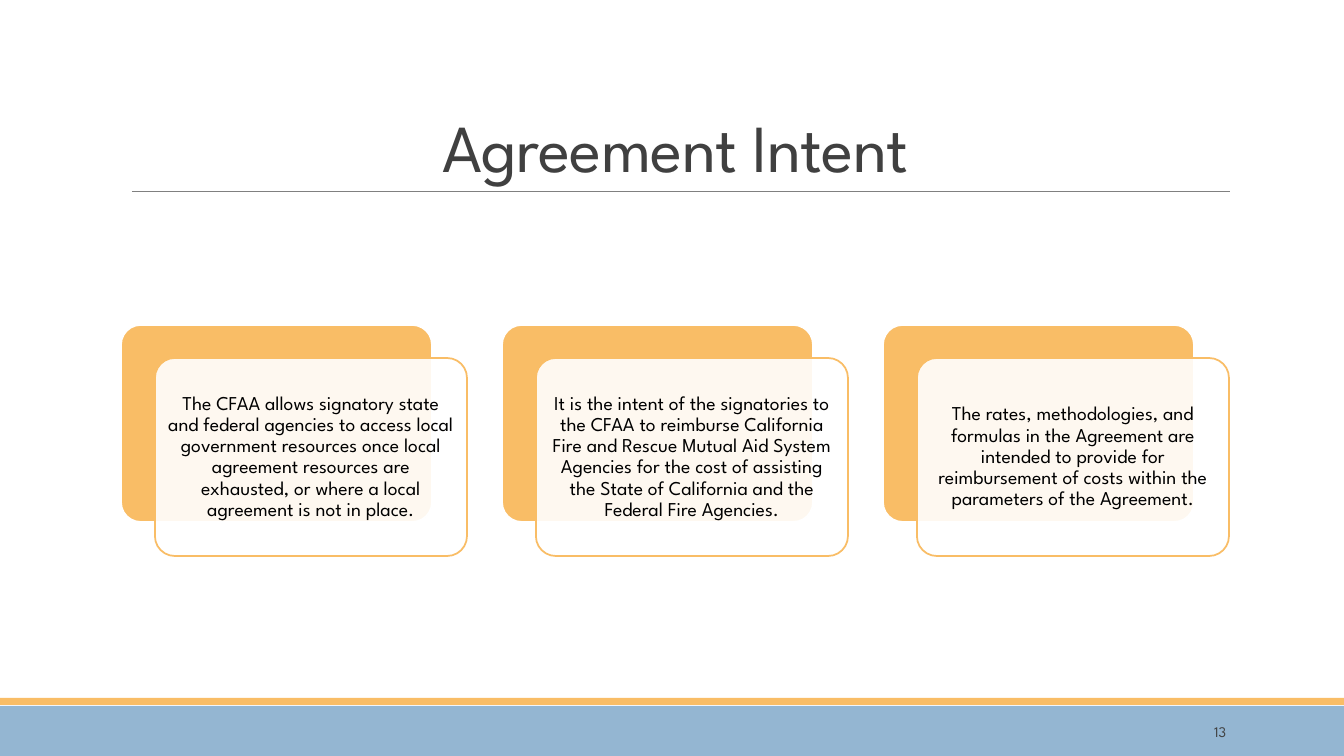
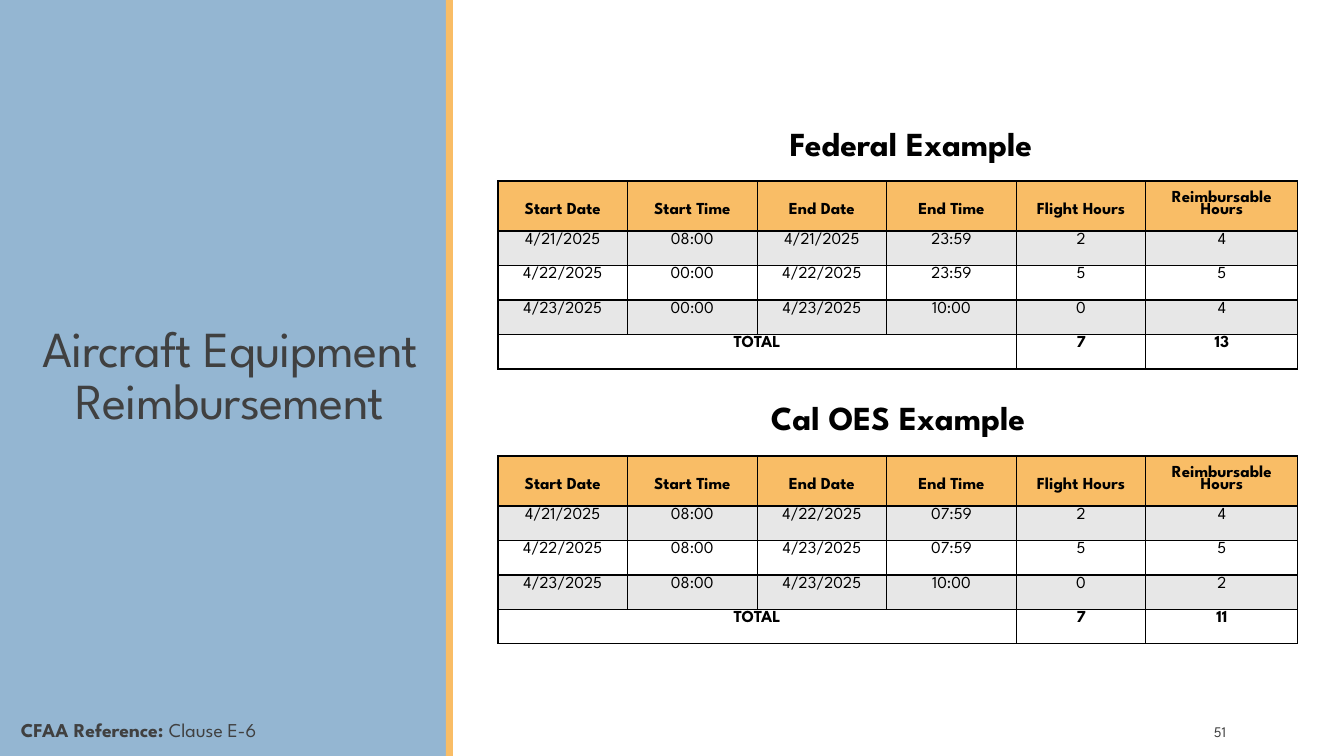
from dataclasses import dataclass

from lxml.etree import SubElement
from pptx import Presentation
from pptx.dml.color import RGBColor
from pptx.enum.shapes import MSO_CONNECTOR, MSO_SHAPE
from pptx.enum.text import MSO_ANCHOR, MSO_AUTO_SIZE, PP_ALIGN
from pptx.oxml.ns import qn
from pptx.shapes.autoshape import Shape
from pptx.slide import Slide
from pptx.table import _Cell
from pptx.text.text import TextFrame, _Paragraph
from pptx.util import Pt

FONT = "League Spartan"
BLUE = "94B6D2"
GOLD = "F9BD66"
DARK = "404040"
BLACK = "000000"
WHITE = "FFFFFF"
STRIPE = "E7E7E7"
RULE = "808080"

SLIDE_WIDTH = 1344
SLIDE_HEIGHT = 756
EMU_PER_PX = 914400 / 100.8


@dataclass(frozen=True)
class Box:
    left: int
    top: int
    width: int
    height: int

    def emu(self) -> tuple[int, int, int, int]:
        return px(self.left), px(self.top), px(self.width), px(self.height)


@dataclass(frozen=True)
class TextStyle:
    size: float
    color: str = BLACK
    bold: bool = False
    align: PP_ALIGN = PP_ALIGN.CENTER
    line_spacing: float = 1.0


@dataclass(frozen=True)
class Example:
    heading: str
    heading_box: Box
    table_top: int
    rows: tuple[tuple[str, ...], ...]
    totals: tuple[str, str]


CARD_STYLE = TextStyle(14, line_spacing=0.9)
HEADING_STYLE = TextStyle(24, bold=True)
NUMBER_STYLE = TextStyle(10.5, DARK, align=PP_ALIGN.RIGHT)
REFERENCE_STYLE = TextStyle(14, DARK, align=PP_ALIGN.LEFT)
HEADER_STYLE = TextStyle(12, bold=True, line_spacing=0.77)
CELL_STYLE = TextStyle(12, line_spacing=0.77)

CARD_TEXTS = (
    "The CFAA allows signatory state and federal agencies to access local "
    "government resources once local agreement resources are exhausted, or "
    "where a local agreement is not in place.",
    "It is the intent of the signatories to the CFAA to reimburse California "
    "Fire and Rescue Mutual Aid System Agencies for the cost of assisting the "
    "State of California and the Federal Fire Agencies.",
    "The rates, methodologies, and formulas in the Agreement are intended to "
    "provide for reimbursement of costs within the parameters of the Agreement.",
)
CARD_PITCH = 381

COLUMN_HEADS = ("Start Date", "Start Time", "End Date", "End Time",
                "Flight Hours", "Reimbursable Hours")
TABLE_LEFT = 498
TABLE_WIDTH = 800
TABLE_HEIGHT = 188
LAST_COLUMN_WIDTH = 152
HEADER_HEIGHT = 50

EXAMPLES = (
    Example("Federal Example", Box(491, 118, 840, 50), 181, (
        ("4/21/2025", "08:00", "4/21/2025", "23:59", "2", "4"),
        ("4/22/2025", "00:00", "4/22/2025", "23:59", "5", "5"),
        ("4/23/2025", "00:00", "4/23/2025", "10:00", "0", "4"),
    ), ("7", "13")),
    Example("Cal OES Example", Box(478, 392, 840, 50), 456, (
        ("4/21/2025", "08:00", "4/22/2025", "07:59", "2", "4"),
        ("4/22/2025", "08:00", "4/23/2025", "07:59", "5", "5"),
        ("4/23/2025", "08:00", "4/23/2025", "10:00", "0", "2"),
    ), ("7", "11")),
)


def px(length: float) -> int:
    return round(length * EMU_PER_PX)


def rgb(color: str) -> RGBColor:
    return RGBColor.from_string(color)


def style_paragraph(paragraph: _Paragraph, style: TextStyle) -> None:
    paragraph.alignment = style.align
    paragraph.line_spacing = style.line_spacing
    paragraph.font.name = FONT
    paragraph.font.size = Pt(style.size)
    paragraph.font.bold = style.bold
    paragraph.font.color.rgb = rgb(style.color)


def write(frame: TextFrame, text: str, style: TextStyle, anchor: MSO_ANCHOR) -> None:
    frame.word_wrap = True
    frame.vertical_anchor = anchor
    frame.text = text
    style_paragraph(frame.paragraphs[0], style)


def add_text(slide: Slide, box: Box, text: str, style: TextStyle,
             anchor: MSO_ANCHOR = MSO_ANCHOR.TOP) -> Shape:
    shape = slide.shapes.add_textbox(*box.emu())
    write(shape.text_frame, text, style, anchor)
    return shape


def add_panel(slide: Slide, box: Box, fill: str, line: str | None = None,
              preset: MSO_SHAPE = MSO_SHAPE.RECTANGLE) -> Shape:
    shape = slide.shapes.add_shape(preset, *box.emu())
    shape.shadow.inherit = False
    shape.fill.solid()
    shape.fill.fore_color.rgb = rgb(fill)
    if line:
        shape.line.color.rgb = rgb(line)
        shape.line.width = Pt(1.25)
    else:
        shape.line.fill.background()
    return shape


def set_title(slide: Slide, box: Box, text: str, size: float, anchor: MSO_ANCHOR) -> None:
    title = slide.shapes.title
    title.left, title.top, title.width, title.height = box.emu()
    write(title.text_frame, text, TextStyle(size, DARK, line_spacing=0.85), anchor)
    title.text_frame.auto_size = MSO_AUTO_SIZE.NONE
    title.text_frame.paragraphs[0].runs[0]._r.get_or_add_rPr().set("spc", "-50")
    slide.shapes._spTree.append(title._element)


def add_number(slide: Slide, number: int) -> None:
    add_text(slide, Box(1092, 712, 144, 40), str(number), NUMBER_STYLE, MSO_ANCHOR.MIDDLE)


def add_rule(slide: Slide, left: int, right: int, top: int) -> None:
    rule = slide.shapes.add_connector(
        MSO_CONNECTOR.STRAIGHT, px(left), px(top), px(right), px(top))
    rule.line.color.rgb = rgb(RULE)
    rule.line.width = Pt(0.5)
    SubElement(rule._element.spPr, qn("a:effectLst"))


def add_card(slide: Slide, left: int, text: str) -> None:
    back_box = Box(left, 325, 311, 197)
    front_box = Box(left + 34, 358, 312, 198)
    back = add_panel(slide, back_box, GOLD, WHITE, MSO_SHAPE.ROUNDED_RECTANGLE)
    front = add_panel(slide, front_box, WHITE, GOLD, MSO_SHAPE.ROUNDED_RECTANGLE)
    for shape in (back, front):
        shape.adjustments[0] = 0.1
    fill_color = front._element.spPr.find(qn("a:solidFill"))[0]
    SubElement(fill_color, qn("a:alpha")).set("val", "90000")
    frame = front.text_frame
    frame.margin_left = frame.margin_right = px(6)
    frame.margin_top = frame.margin_bottom = px(6)
    write(frame, text, CARD_STYLE, MSO_ANCHOR.MIDDLE)


def format_cell(cell: _Cell, fill: str, style: TextStyle) -> None:
    properties = cell._tc.get_or_add_tcPr()
    for side in ("a:lnL", "a:lnR", "a:lnT", "a:lnB"):
        border = SubElement(properties, qn(side), w=str(Pt(1)))
        SubElement(SubElement(border, qn("a:solidFill")), qn("a:srgbClr")).set("val", BLACK)
    cell.fill.solid()
    cell.fill.fore_color.rgb = rgb(fill)
    cell.margin_top = px(4)
    cell.margin_bottom = px(0)
    style_paragraph(cell.text_frame.paragraphs[0], style)


def add_example(slide: Slide, example: Example) -> None:
    add_text(slide, example.heading_box, example.heading, HEADING_STYLE)
    rows = (COLUMN_HEADS, *example.rows, ("TOTAL", "", "", "", *example.totals))
    last = len(rows) - 1
    box = Box(TABLE_LEFT, example.table_top, TABLE_WIDTH, TABLE_HEIGHT)
    table = slide.shapes.add_table(len(rows), len(COLUMN_HEADS), *box.emu()).table
    for column in table.columns:
        column.width = px((TABLE_WIDTH - LAST_COLUMN_WIDTH) / (len(COLUMN_HEADS) - 1))
    table.columns[len(COLUMN_HEADS) - 1].width = px(LAST_COLUMN_WIDTH)

    for row_index, values in enumerate(rows):
        is_header = row_index == 0
        table.rows[row_index].height = px(
            HEADER_HEIGHT if is_header else (TABLE_HEIGHT - HEADER_HEIGHT) / last)
        fill = GOLD if is_header else STRIPE if row_index % 2 else WHITE
        style = HEADER_STYLE if row_index in (0, last) else CELL_STYLE
        for column_index, value in enumerate(values):
            cell = table.cell(row_index, column_index)
            if value:
                cell.text = value
            format_cell(cell, fill, style)
            if is_header:
                cell.vertical_anchor = MSO_ANCHOR.BOTTOM
                cell.margin_bottom = px(14)
    table.cell(last, 0).merge(table.cell(last, 3))


def build_intent(slide: Slide) -> None:
    add_panel(slide, Box(0, 706, SLIDE_WIDTH, 50), BLUE)
    add_panel(slide, Box(0, 698, SLIDE_WIDTH, 7), GOLD)
    add_rule(slide, 132, 1230, 191)
    set_title(slide, Box(121, 31, 1109, 160), "Agreement Intent", 48, MSO_ANCHOR.BOTTOM)
    for index, text in enumerate(CARD_TEXTS):
        add_card(slide, 121 + index * CARD_PITCH, text)
    add_number(slide, 13)


def build_reimbursement(slide: Slide) -> None:
    add_panel(slide, Box(0, 0, 446, SLIDE_HEIGHT), BLUE)
    add_panel(slide, Box(446, 0, 7, SLIDE_HEIGHT), GOLD)
    set_title(slide, Box(27, 67, 406, 622), "Aircraft Equipment Reimbursement",
              36, MSO_ANCHOR.MIDDLE)
    reference = add_text(slide, Box(11, 713, 454, 34), "CFAA Reference: ", REFERENCE_STYLE)
    paragraph = reference.text_frame.paragraphs[0]
    paragraph.runs[0].font.bold = True
    paragraph.add_run().text = "Clause E-6"
    for example in EXAMPLES:
        add_example(slide, example)
    add_number(slide, 51)


def main() -> None:
    presentation = Presentation()
    presentation.slide_width = px(SLIDE_WIDTH)
    presentation.slide_height = px(SLIDE_HEIGHT)
    title_only = presentation.slide_layouts[5]
    for build in (build_intent, build_reimbursement):
        build(presentation.slides.add_slide(title_only))
    presentation.save("out.pptx")


if __name__ == "__main__":
    main()
